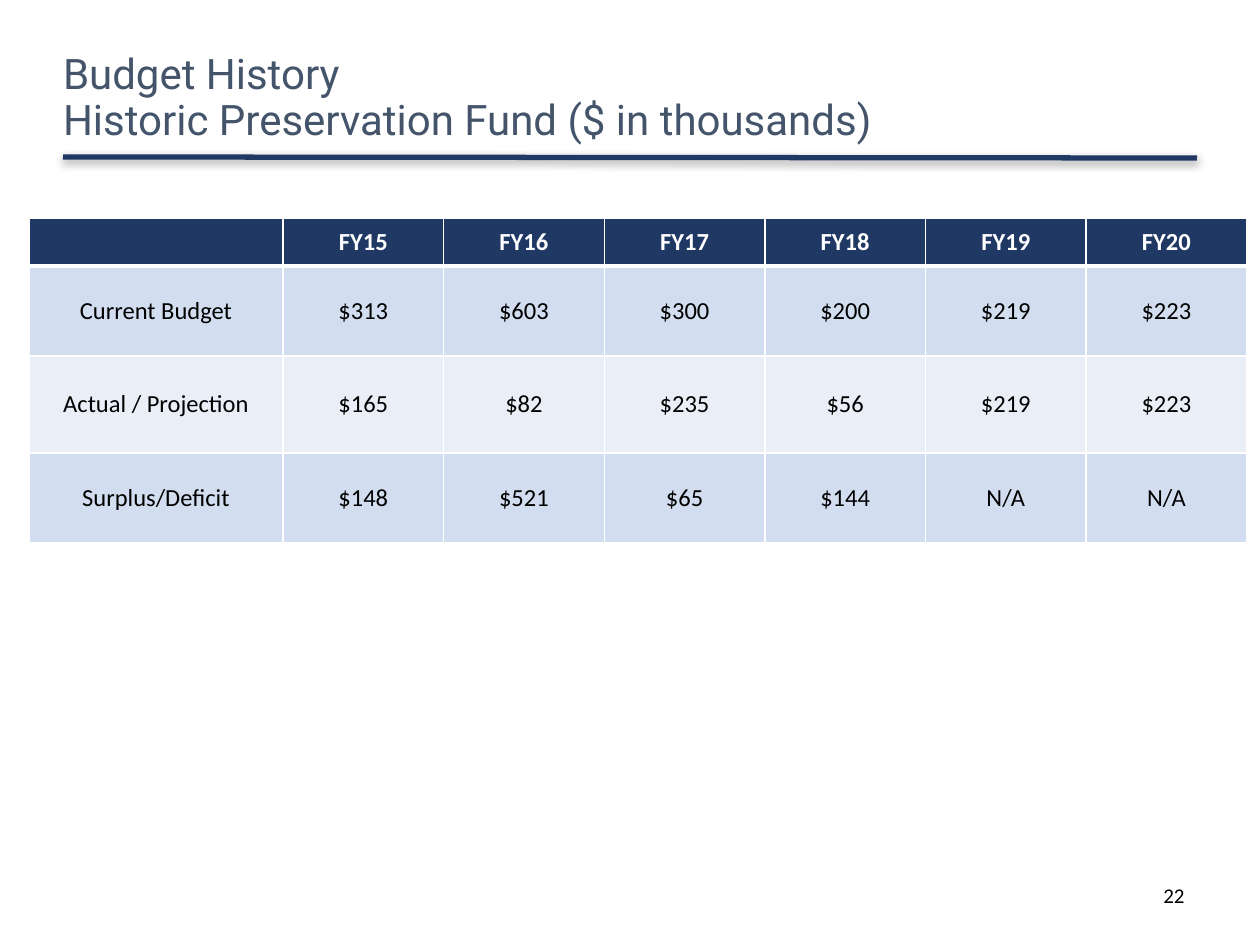
from lxml import etree
from pptx import Presentation
from pptx import util as u
from pptx.dml.color import RGBColor
from pptx.enum import shapes, text
from pptx.oxml import ns

# Content
TITLE = "Budget History\vHistoric Preservation Fund ($ in thousands)"
PAGE_NUMBER = "22"
BUDGET = [
    ["", "FY15", "FY16", "FY17", "FY18", "FY19", "FY20"],
    ["Current Budget", "$313", "$603", "$300", "$200", "$219", "$223"],
    ["Actual / Projection", "$165", "$82", "$235", "$56", "$219", "$223"],
    ["Surplus/Deficit", "$148", "$521", "$65", "$144", "N/A", "N/A"],
]

# Look
COLORS = {"navy": "203864", "title": "44546A", "odd": "D2DEEF",
          "even": "EAEFF7", "white": "FFFFFF", "black": "000000"}
PX = u.Inches(1) / 126
ROW_HEIGHTS = [48, 90, 97, 90]
TABLE_WIDTH, LABEL_WIDTH = 1218, 254


def px(value):
    return u.Emu(round(value * PX))


def color(name):
    return RGBColor.from_string(COLORS[name])


def style(para, size, name, font="Calibri", bold=False, align=None):
    para.alignment = align
    para.font.size = u.Pt(size)
    para.font.name = font
    para.font.bold = bold
    para.font.color.rgb = color(name)


def add_text(page, wording, left, top, width, height):
    frame = page.shapes.add_textbox(px(left), px(top), px(width), px(height)).text_frame
    frame.word_wrap = True
    para = frame.paragraphs[0]
    para.text = wording
    return frame, para


def add_borders(cell, bottom):
    props = cell._tc.get_or_add_tcPr()
    widths = {"lnL": 1, "lnR": 1, "lnT": 1, "lnB": bottom}
    for index, (side, width) in enumerate(widths.items()):
        line = etree.Element(ns.qn("a:" + side), w=str(u.Pt(width)))
        fill = etree.SubElement(line, ns.qn("a:solidFill"))
        etree.SubElement(fill, ns.qn("a:srgbClr"), val=COLORS["white"])
        props.insert(index, line)


deck = Presentation()
deck.slide_width, deck.slide_height = px(1260), px(945)
page = deck.slides.add_slide(deck.slide_layouts[6])

# Rule under the title, with a soft shadow
rule = page.shapes.add_connector(
    shapes.MSO_CONNECTOR.STRAIGHT, px(63), px(157), px(1197), px(158))
rule.line.color.rgb = color("navy")
rule.line.width = u.Pt(3)
effects = etree.SubElement(rule._element.spPr, ns.qn("a:effectLst"))
shadow = etree.SubElement(effects, ns.qn("a:outerShdw"), blurRad=str(u.Pt(5)),
                          dist=str(u.Pt(1.6)), dir="5400000", rotWithShape="0")
tint = etree.SubElement(shadow, ns.qn("a:srgbClr"), val=COLORS["black"])
etree.SubElement(tint, ns.qn("a:alpha"), val="38000")

# Title
frame, para = add_text(page, TITLE, 63, 41, 864, 116)
frame.margin_left = frame.margin_right = frame.margin_top = frame.margin_bottom = 0
frame.vertical_anchor = text.MSO_ANCHOR.MIDDLE
para.line_spacing = 0.9
style(para, 24, "title", font="Roboto")

# Page number
frame, para = add_text(page, PAGE_NUMBER, 903, 876, 294, 50)
style(para, 12, "black", align=text.PP_ALIGN.RIGHT)

# Budget table
table = page.shapes.add_table(
    len(BUDGET), len(BUDGET[0]), px(29), px(218),
    px(TABLE_WIDTH), px(sum(ROW_HEIGHTS))).table
year_width = (TABLE_WIDTH - LABEL_WIDTH) / (len(BUDGET[0]) - 1)
for index, column in enumerate(table.columns):
    column.width = px(year_width if index else LABEL_WIDTH)

for r, (values, height) in enumerate(zip(BUDGET, ROW_HEIGHTS)):
    header = r == 0
    table.rows[r].height = px(height)
    for c, value in enumerate(values):
        cell = table.cell(r, c)
        cell.text = value
        cell.vertical_anchor = text.MSO_ANCHOR.MIDDLE
        cell.margin_top = cell.margin_bottom = 0
        cell.fill.solid()
        cell.fill.fore_color.rgb = color("navy" if header else "odd" if r % 2 else "even")
        add_borders(cell, bottom=3 if header else 1)
        style(cell.text_frame.paragraphs[0], 14, "white" if header else "black",
              bold=header, align=text.PP_ALIGN.CENTER)

deck.save("out.pptx")
